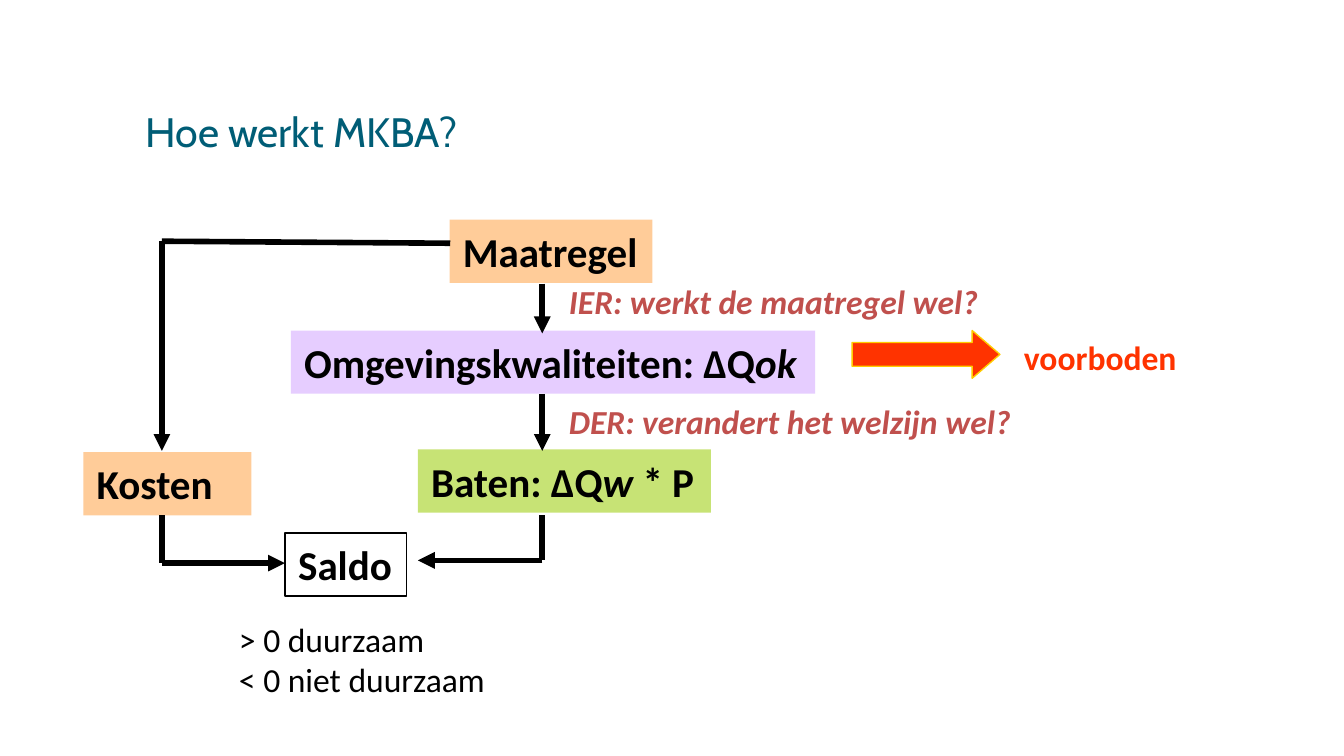
from itertools import pairwise

from lxml.etree import SubElement
from pptx import Presentation
from pptx.dml.color import RGBColor
from pptx.enum.shapes import MSO_CONNECTOR, MSO_SHAPE
from pptx.enum.text import MSO_ANCHOR, MSO_AUTO_SIZE, PP_ALIGN
from pptx.oxml.ns import qn
from pptx.util import Emu, Pt

SCALE = 4572
BLACK = "000000"
ORANGE = "FFCC99"
RED = "C0504D"
VERMILION = "FF3300"


def px(n):
    return Emu(n * SCALE)


def rgb(value):
    return RGBColor.from_string(value)


def write_text(sp, paragraphs, size, color=BLACK, font="Calibri", bold=False, wrap=False):
    tf = sp.text_frame
    tf.word_wrap = wrap
    tf.auto_size = MSO_AUTO_SIZE.SHAPE_TO_FIT_TEXT
    tf.vertical_anchor = MSO_ANCHOR.TOP
    for i, runs in enumerate(paragraphs):
        p = tf.paragraphs[0] if i == 0 else tf.add_paragraph()
        p.alignment = PP_ALIGN.LEFT
        for text, italic in runs:
            r = p.add_run()
            r.text = text
            r.font.name = font
            r.font.size = Pt(size)
            r.font.bold = bold
            r.font.italic = italic
            r.font.color.rgb = rgb(color)


def add_preset(s, shape, box, fill=None, line=None, opacity=100):
    sp = s.shapes.add_shape(shape, *map(px, box))
    sp.shadow.inherit = False
    if fill:
        sp.fill.solid()
        sp.fill.fore_color.rgb = rgb(fill)
    else:
        sp.fill.background()
    if opacity < 100:
        color = sp._element.spPr.find(qn("a:solidFill"))[0]
        SubElement(color, qn("a:alpha"), val=str(opacity * 1000))
    if line:
        sp.line.color.rgb = rgb(line)
        sp.line.width = Pt(0.75)
    else:
        sp.line.fill.background()
    return sp


def add_step(s, box, runs, fill=None, line=None, opacity=100, wrap=False):
    sp = add_preset(s, MSO_SHAPE.RECTANGLE, box, fill, line, opacity)
    write_text(sp, [runs], 22, bold=True, wrap=wrap)


def add_label(s, box, paragraphs, size=18, **style):
    sp = s.shapes.add_textbox(*map(px, box))
    write_text(sp, paragraphs, size, **style)


def add_route(s, *points, arrow=True):
    for start, end in pairwise(points):
        c = s.shapes.add_connector(MSO_CONNECTOR.STRAIGHT, *map(px, start + end))
        c.line.color.rgb = rgb(BLACK)
        c.line.width = Pt(3)
        if arrow and end == points[-1]:
            ln = c._element.spPr.find(qn("a:ln"))
            SubElement(ln, qn("a:tailEnd"), type="triangle")
        SubElement(c._element.spPr, qn("a:effectLst"))


def main():
    prs = Presentation()
    prs.slide_width, prs.slide_height = px(2000), px(1125)
    s = prs.slides.add_slide(prs.slide_layouts[6])

    add_step(s, (669, 327, 302, 94), [("Maatregel", False)], ORANGE)
    add_step(s, (433, 492, 780, 94),
             [("Omgevingskwaliteiten: ΔQ", False), ("ok", True)], "CC99FF", opacity=49)
    add_step(s, (622, 669, 436, 94),
             [("Baten: ΔQ", False), ("w", True), (" * P", False)], "99CC00", opacity=54)
    add_step(s, (124, 673, 250, 94), [("Kosten", False)], ORANGE, wrap=True)
    add_step(s, (424, 793, 181, 94), [("Saldo", False)], line=BLACK)

    cost_x, benefit_x = 241, 807
    add_route(s, (670, 362), (cost_x, 359), (cost_x, 671))
    add_route(s, (benefit_x, 422), (benefit_x, 496))
    add_route(s, (benefit_x, 586), (benefit_x, 671))
    add_route(s, (benefit_x, 767), (benefit_x, 834), (622, 834))
    add_route(s, (cost_x, 767), (cost_x, 838), (424, 838))

    add_label(s, (827, 408, 656, 80), [[("IER: werkt de maatregel wel?", True)]],
              color=RED, bold=True)
    add_label(s, (827, 587, 706, 80), [[("DER: verandert het welzijn wel?", True)]],
              color=RED, bold=True)
    add_label(s, (1504, 492, 330, 80), [[("voorboden", False)]],
              color=VERMILION, bold=True, wrap=True)
    arrow = add_preset(s, MSO_SHAPE.RIGHT_ARROW, (1268, 492, 220, 71), VERMILION, "FFCC00")
    arrow.adjustments[0] = 0.5
    arrow.adjustments[1] = 0.58

    add_label(s, (197, 148, 546, 94), [[("Hoe werkt MKBA?", False)]], 22,
              color="005D76", font="Cabin")
    add_label(s, (336, 911, 412, 142),
              [[("> 0 duurzaam", False)], [("< 0 niet duurzaam", False)]])

    prs.save("out.pptx")


if __name__ == "__main__":
    main()
